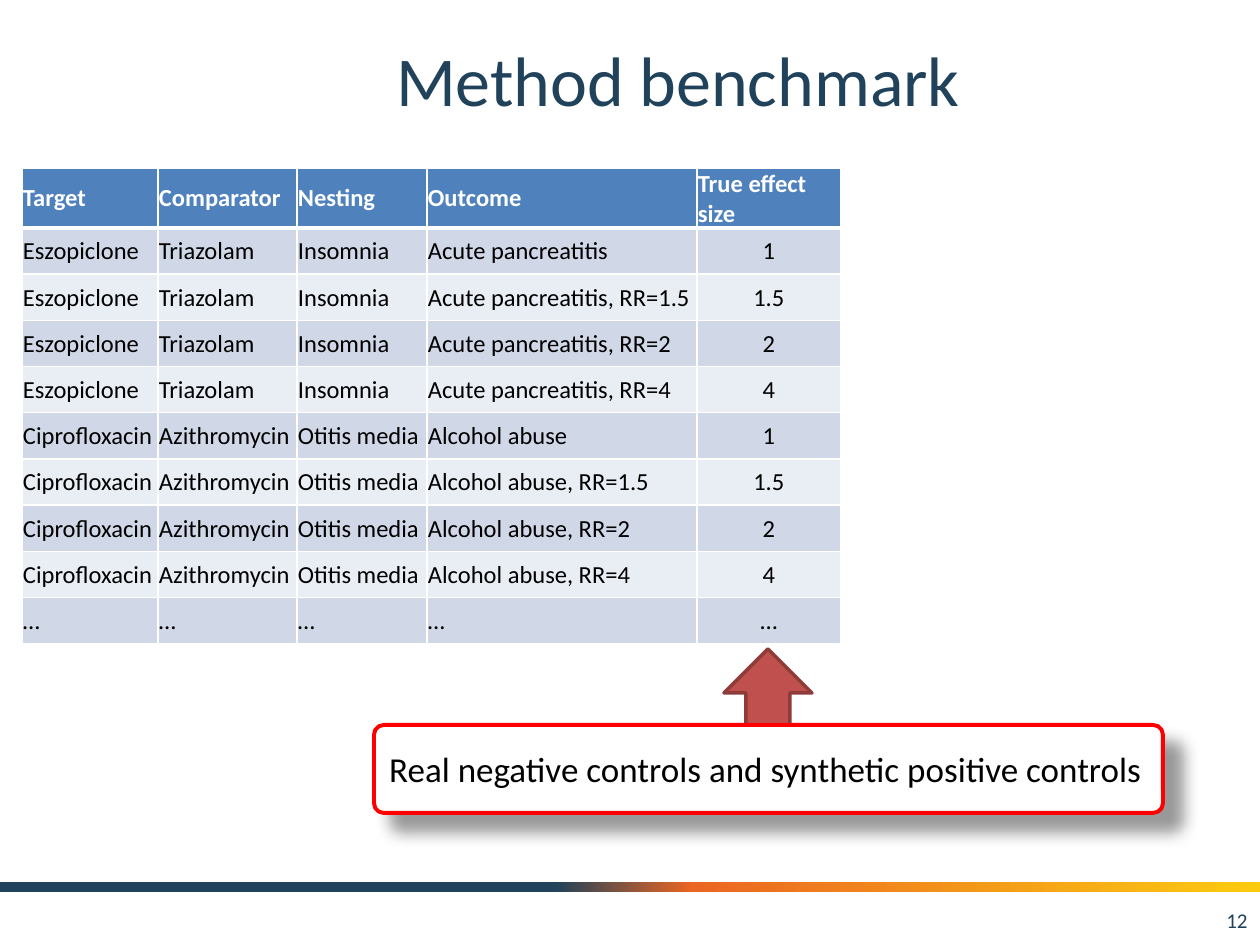
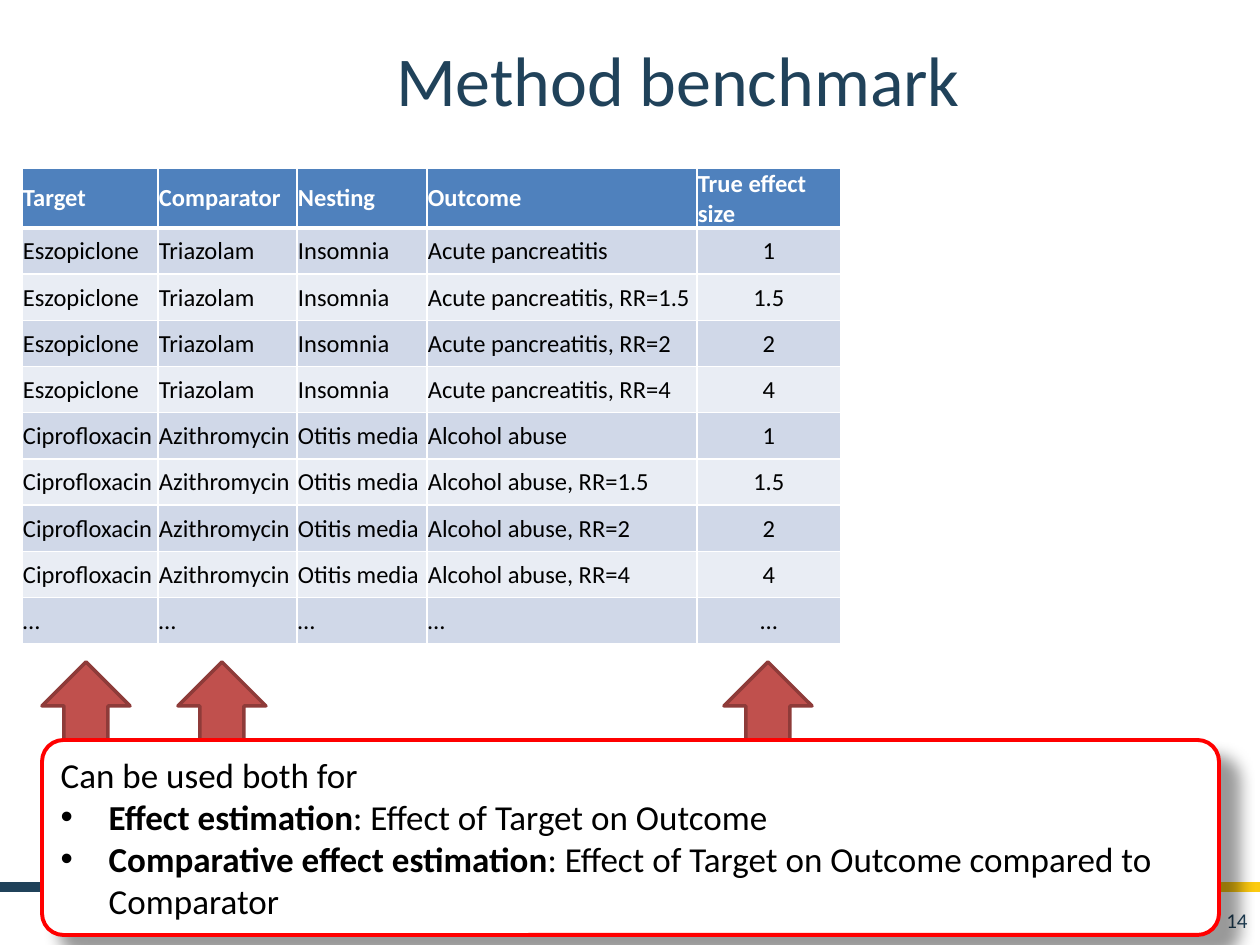
from lxml import etree
from pptx import Presentation, util as u
from pptx.dml.color import RGBColor
from pptx.enum import shapes, text
from pptx.oxml.ns import qn

PX = u.Inches(1) / 126
NAVY, WHITE, BLACK, RED = "20425A", "FFFFFF", "000000", "FF0000"
HEADER_BLUE, ROW_FILLS = "4F81BD", ("E9EDF4", "D0D8E8")
ARROW_FILL, ARROW_LINE = "C0504D", "8E3B39"
BAND_STOPS = ((44, NAVY), (55, "EB6622"), (100, "FCCB10"))
ALIGN = {"left": text.PP_ALIGN.LEFT, "center": text.PP_ALIGN.CENTER,
         "right": text.PP_ALIGN.RIGHT}

COLUMNS = {"Target": 136, "Comparator": 139, "Nesting": 130,
           "Outcome": 270, "True effect size": 144}
STUDIES = (("Eszopiclone", "Triazolam", "Insomnia", "Acute pancreatitis"),
           ("Ciprofloxacin", "Azithromycin", "Otitis media", "Alcohol abuse"))
EFFECT_SIZES = ("1", "1.5", "2", "4")


def px(length):
    return u.Emu(round(length * PX))


def color(hex_code):
    return RGBColor.from_string(hex_code)


def add_xml(parent, tag, **attributes):
    values = {name: str(value) for name, value in attributes.items()}
    return etree.SubElement(parent, qn("a:" + tag), values)


def write(frame, paragraphs, size=14, ink=BLACK, bold=False, align="left"):
    """Fill a text frame; a (term, explanation) pair becomes a bullet with a bold term."""
    frame.word_wrap = True
    for index, content in enumerate(paragraphs):
        paragraph = frame.add_paragraph() if index else frame.paragraphs[0]
        paragraph.alignment = ALIGN[align]
        runs = [(content, bold)]
        if isinstance(content, tuple):
            term, explanation = content
            runs = [(term, True), (explanation, False)]
            properties = paragraph._p.get_or_add_pPr()
            properties.set("marL", str(px(48)))
            properties.set("indent", str(-px(48)))
            add_xml(properties, "buFont", typeface="Arial")
            add_xml(properties, "buChar", char="•")
        for words, is_bold in runs:
            run = paragraph.add_run()
            run.text = words
            run.font.name = "Calibri"
            run.font.size = u.Pt(size)
            run.font.bold = is_bold
            run.font.color.rgb = color(ink)


def benchmark_rows():
    rows = [tuple(COLUMNS)]
    for *study, outcome in STUDIES:
        for effect in EFFECT_SIZES:
            label = outcome if effect == "1" else f"{outcome}, RR={effect}"
            rows.append((*study, label, effect))
    rows.append(("…",) * len(COLUMNS))
    return rows


class Deck:
    def __init__(self):
        self.prs = Presentation()
        self.prs.slide_width, self.prs.slide_height = px(1260), px(945)
        self.slide = None

    def new_slide(self, title, number):
        self.slide = self.prs.slides.add_slide(self.prs.slide_layouts[6])
        self.band()
        self.label(title, 158, 21, 1040, 116, size=40, ink=NAVY, align="center")
        self.label(number, 966, 895, 294, 50, size=12, ink=NAVY, align="right")

    def label(self, words, left, top, width, height, **style):
        frame = self.slide.shapes.add_textbox(
            px(left), px(top), px(width), px(height)).text_frame
        frame.vertical_anchor = text.MSO_ANCHOR.MIDDLE
        write(frame, [words], **style)

    def block(self, kind, left, top, width, height, fill=WHITE, line=None, weight=2):
        shape = self.slide.shapes.add_shape(
            kind, px(left), px(top), px(width), px(height))
        shape.shadow.inherit = False
        shape.fill.solid()
        shape.fill.fore_color.rgb = color(fill)
        if line:
            shape.line.color.rgb = color(line)
            shape.line.width = u.Pt(weight)
        else:
            shape.line.fill.background()
        return shape

    def band(self):
        band = self.block(shapes.MSO_SHAPE.RECTANGLE, 0, 882, 1260, 10)
        band.fill.gradient()
        band.fill.gradient_angle = 0
        stops = band._element.spPr.find(".//" + qn("a:gsLst"))
        stops.clear()
        for percent, hue in BAND_STOPS:
            stop = add_xml(stops, "gs", pos=percent * 1000)
            add_xml(stop, "srgbClr", val=hue)

    def up_arrow(self, left, top):
        self.block(shapes.MSO_SHAPE.UP_ARROW, left, top, 88, 91,
                   fill=ARROW_FILL, line=ARROW_LINE)

    def callout(self, paragraphs, left, top, width, height):
        box = self.block(shapes.MSO_SHAPE.ROUNDED_RECTANGLE, left, top, width, height,
                         line=RED, weight=2.25)
        box.adjustments[0] = 0.11
        effects = box._element.spPr.find(qn("a:effectLst"))
        shadow = add_xml(effects, "outerShdw", blurRad=u.Pt(9), dist=u.Pt(14),
                         dir=45 * 60000, algn="tl", rotWithShape=0)
        shade = add_xml(shadow, "srgbClr", val=BLACK)
        add_xml(shade, "alpha", val=40000)
        box.text_frame.vertical_anchor = text.MSO_ANCHOR.MIDDLE
        write(box.text_frame, paragraphs, size=20)

    def table(self, rows, widths, left, top, height, header_height):
        table = self.slide.shapes.add_table(
            len(rows), len(widths), px(left), px(top), px(sum(widths)), px(height)).table
        for column, width in zip(table.columns, widths):
            column.width = px(width)
        body_height = (height - header_height) / (len(rows) - 1)
        for r, values in enumerate(rows):
            table.rows[r].height = px(body_height if r else header_height)
            for c, value in enumerate(values):
                is_effect = r > 0 and c == len(widths) - 1
                self.cell(table.cell(r, c), value, r, "center" if is_effect else "left")

    def cell(self, cell, value, row, align):
        cell.margin_left = cell.margin_right = cell.margin_top = px(1)
        cell.margin_bottom = 0
        cell.vertical_anchor = text.MSO_ANCHOR.MIDDLE
        weights = {"L": 1, "R": 1, "T": 3 if row == 1 else 1, "B": 1 if row else 3}
        for side, weight in weights.items():
            border = add_xml(cell._tc.get_or_add_tcPr(), "ln" + side, w=u.Pt(weight))
            add_xml(add_xml(border, "solidFill"), "srgbClr", val=WHITE)
        cell.fill.solid()
        cell.fill.fore_color.rgb = color(ROW_FILLS[row % 2] if row else HEADER_BLUE)
        write(cell.text_frame, [value], ink=BLACK if row else WHITE,
              bold=row == 0, align=align)

    def benchmark_table(self):
        self.table(benchmark_rows(), list(COLUMNS.values()), 22, 168,
                   height=476, header_height=60)


def main():
    deck = Deck()
    effect_arrow = 724

    deck.new_slide("Method benchmark", "12")
    deck.benchmark_table()
    deck.up_arrow(effect_arrow, 649)
    deck.callout(["Real negative controls and synthetic positive controls"],
                 374, 725, 789, 88)

    deck.new_slide("Method benchmark", "14")
    for arrow_left in (42, effect_arrow, 178):
        deck.up_arrow(arrow_left, 662)
    deck.callout(
        ["Can be used both for",
         ("Effect estimation", ": Effect of Target on Outcome"),
         ("Comparative effect estimation",
          ": Effect of Target on Outcome compared to Comparator")],
        42, 740, 1177, 195)
    deck.benchmark_table()

    deck.prs.save("out.pptx")


if __name__ == "__main__":
    main()
